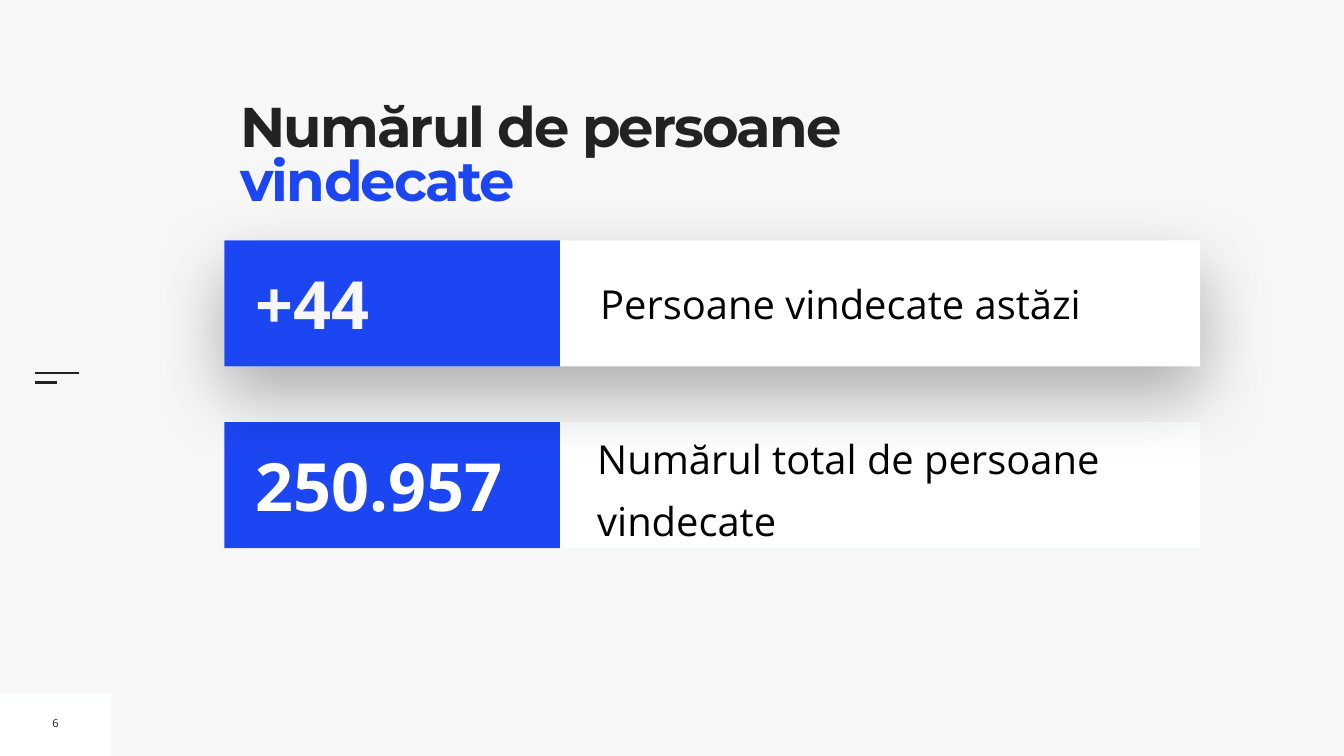
from dataclasses import dataclass

from lxml.etree import SubElement
from pptx import Presentation
from pptx.dml.color import RGBColor
from pptx.enum.shapes import MSO_CONNECTOR, MSO_SHAPE
from pptx.enum.text import MSO_ANCHOR, MSO_AUTO_SIZE, PP_ALIGN
from pptx.oxml.ns import qn
from pptx.util import Pt


@dataclass(frozen=True)
class Theme:
    paper: str = "F7F7F7"
    white: str = "FEFFFF"
    pure_white: str = "FFFFFF"
    accent: str = "1D46F3"
    ink: str = "222222"
    black: str = "000000"
    heading: str = "Montserrat"
    body: str = "Open Sans"
    title_size: int = 80
    number_size: int = 95
    label_size: int = 57
    page_size: int = 16


class Deck:
    def __init__(self, prs, theme):
        self.theme = theme
        self.slide = prs.slides.add_slide(prs.slide_layouts[5])
        self.fill(self.slide.background, theme.paper)

    def fill(self, target, color):
        target.fill.solid()
        target.fill.fore_color.rgb = RGBColor.from_string(color)

    def frame(self, sp, inset, **fmt):
        tf = sp.text_frame
        fmt = {"word_wrap": True, "auto_size": MSO_AUTO_SIZE.NONE, **fmt}
        for side in ("left", "top", "right", "bottom"):
            fmt[f"margin_{side}"] = Pt(inset)
        for name, value in fmt.items():
            setattr(tf, name, value)
        return tf

    def run(self, p, text, font, size, color, bold=False):
        r = p.add_run()
        r.text = text
        for name, value in {"name": font, "size": Pt(size), "bold": bold}.items():
            setattr(r.font, name, value)
        r.font.color.rgb = RGBColor.from_string(color)
        return r

    def title(self, box, parts):
        """Fill the title placeholder with (text, colour) parts."""
        sp = self.slide.shapes.title
        for name, value in zip(("left", "top", "width", "height"), box):
            setattr(sp, name, Pt(value))
        self.fill(sp, self.theme.paper)
        p = self.frame(sp, 0, vertical_anchor=MSO_ANCHOR.TOP).paragraphs[0]
        p.alignment, p.line_spacing = PP_ALIGN.LEFT, 0.8
        for text, color in parts:
            r = self.run(p, text, self.theme.heading, self.theme.title_size, color, True)
            r.font._element.set("spc", "-270")

    def rect(self, box, color, parent=None):
        shapes = (parent or self.slide).shapes
        sp = shapes.add_shape(MSO_SHAPE.RECTANGLE, *map(Pt, box))
        sp.shadow.inherit = False
        self.fill(sp, color)
        sp.line.fill.background()
        return sp

    def soft_shadow(self, sp):
        effects = sp._element.spPr.find(qn("a:effectLst"))
        shadow = SubElement(effects, qn("a:outerShdw"), blurRad=str(Pt(100)),
                            dist=str(Pt(40)), dir="5400000", rotWithShape="0")
        color = SubElement(shadow, qn("a:srgbClr"), val=self.theme.black)
        SubElement(color, qn("a:alpha"), val="30000")

    def text(self, box, text, size, color, parent=None, bold=False, inset=7.2,
             wrap=True, **paragraph):
        sp = (parent or self.slide).shapes.add_textbox(*map(Pt, box))
        tf = self.frame(sp, inset, vertical_anchor=MSO_ANCHOR.MIDDLE, word_wrap=wrap)
        p = tf.paragraphs[0]
        for name, value in paragraph.items():
            setattr(p, name, value)
        self.run(p, text, self.theme.body, size, color, bold)

    def line(self, x, y, length):
        ln = self.slide.shapes.add_connector(
            MSO_CONNECTOR.STRAIGHT, Pt(x), Pt(y), Pt(x + length), Pt(y))
        ln.line.color.rgb = RGBColor.from_string(self.theme.ink)
        ln.line.width = Pt(3)
        SubElement(ln._element.spPr, qn("a:effectLst"))

    def stat_row(self, top, number, number_color, label, label_box,
                 raised=False, **label_format):
        """Add a grouped card: number on a blue tile, label beside it."""
        t, left, height = self.theme, 320.4, 180
        group = self.slide.shapes.add_group_shape()
        card = self.rect((left, top, 1394, height), t.white, group)
        if raised:
            self.soft_shadow(card)
        self.text(label_box, label, t.label_size, t.black, group, **label_format)
        self.rect((left, top, 479.5, height), t.accent, group)
        self.text((left + 38.2, top + 25.2, 434, 129.6), number, t.number_size,
                  number_color, group, bold=True)


def main():
    prs = Presentation()
    prs.slide_width, prs.slide_height = Pt(1920), Pt(1080)
    t = Theme()
    deck = Deck(prs, t)

    deck.rect((0, 991, 158.4, 89), t.white)
    for y, length in ((533.5, 63), (546.5, 31.5)):
        deck.line(49.7, y, length)
    deck.title((343.4, 149, 936.7, 196.6),
               [("Numărul de persoane ", t.ink), ("vindecate", t.accent)])
    deck.text((67, 1014.5, 24.5, 36.7), "6", t.page_size, t.ink,
              wrap=False, alignment=PP_ALIGN.CENTER)

    # The lower row comes first, so the raised row casts its shadow over it.
    deck.stat_row(603, "250.957", t.pure_white, "Numărul total de persoane vindecate",
                  (853.2, 604, 860.4, 170), inset=0, line_spacing=1.3,
                  space_before=Pt(20))
    deck.stat_row(343.4, "+44", t.paper, "Persoane vindecate astăzi",
                  (850.3, 391.7, 846.7, 83.5), raised=True)
    prs.save("out.pptx")


if __name__ == "__main__":
    main()
